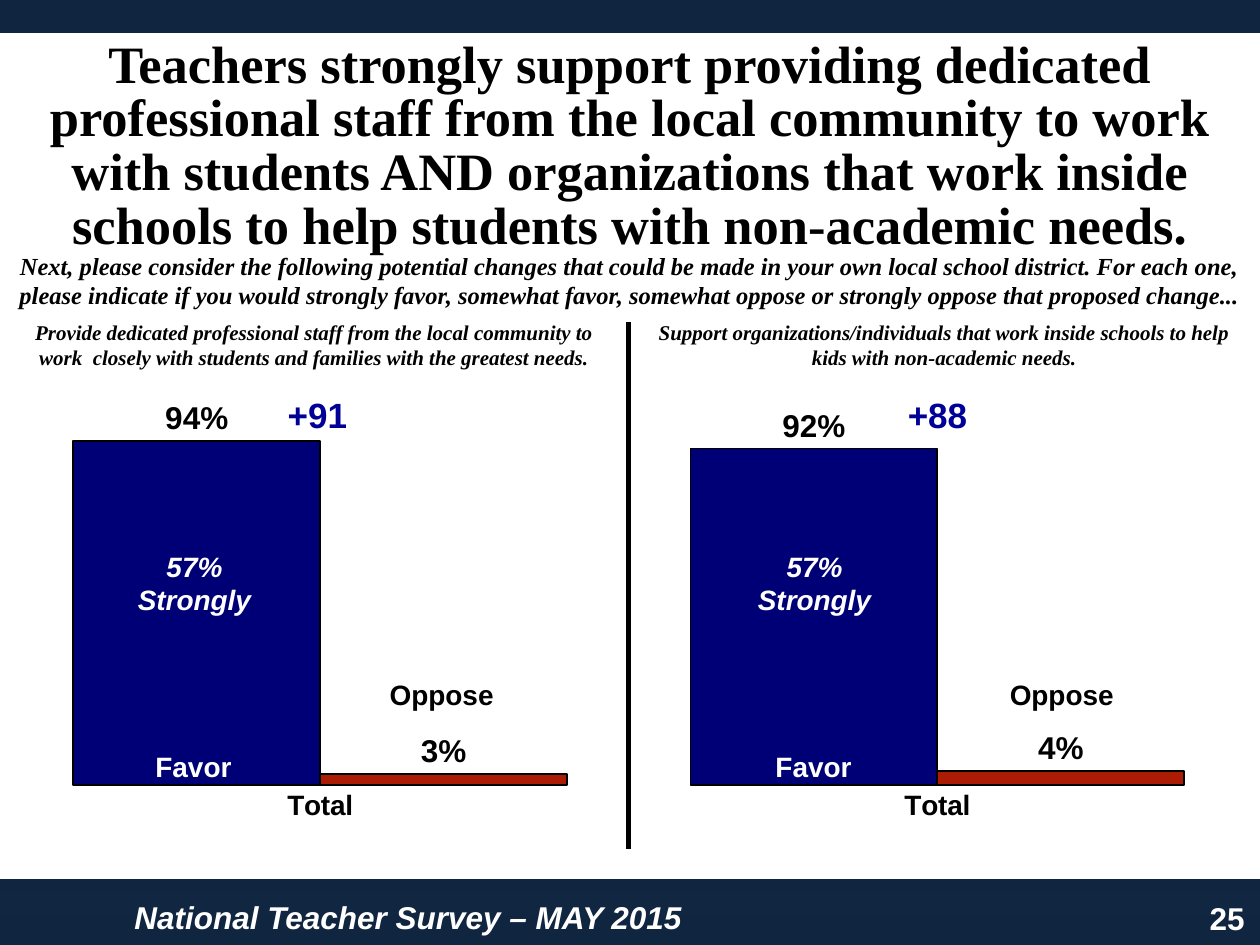
from copy import deepcopy

from lxml import etree
from pptx import Presentation
from pptx import util as u
from pptx.chart.data import CategoryChartData
from pptx.dml.color import RGBColor
from pptx.enum import chart as charts, shapes, text
from pptx.oxml import parse_xml
from pptx.oxml.ns import nsdecls, qn

COLORS = {
    "navy": "10253F", "slate": "17375E", "white": "FFFFFF", "black": "000000",
    "favor": "000076", "oppose": "AC1C04", "margin": "000099",
}
SERIF, SANS = "Times New Roman", "Arial"
COLUMN_PITCH = 12.5


def color(name):
    return RGBColor.from_string(COLORS[name])


class SurveySlide:
    def __init__(self, presentation, layout):
        self.slide = presentation.slides.add_slide(presentation.slide_layouts[layout])
        self.shapes = self.slide.shapes

    def style(self, font, name=SANS, size=16, ink="black", bold=True, italic=False):
        values = {"name": name, "size": u.Pt(size), "bold": bold, "italic": italic}
        for key, value in values.items():
            setattr(font, key, value)
        font.color.rgb = color(ink)

    def background(self):
        fill = self.slide.background.fill
        fill.gradient()
        fill.gradient_angle = 90
        stop_list = self.slide.element.find(".//" + qn("a:gsLst"))
        stop_list.insert(1, deepcopy(stop_list[0]))
        for stop, place, name in zip(fill.gradient_stops, (0, 0.5, 1), ("navy", "slate", "navy")):
            stop.position = place
            stop.color.rgb = color(name)

    def panel(self, box):
        shape = self.shapes.add_shape(shapes.MSO_SHAPE.RECTANGLE, *map(u.Cm, box))
        shape.shadow.inherit = False
        shape.fill.solid()
        shape.fill.fore_color.rgb = color("white")
        shape.line.color.rgb = color("navy")
        shape.line.width = u.Pt(6)

    def set_text(self, shape, lines, align="CENTER", spacing=1.0, **font):
        frame = shape.text_frame
        frame.text = "\n".join(lines)
        frame.word_wrap = True
        frame.auto_size = text.MSO_AUTO_SIZE.NONE
        frame.vertical_anchor = text.MSO_ANCHOR.TOP
        for paragraph in frame.paragraphs:
            if shape.is_placeholder:
                properties = paragraph._p.get_or_add_pPr()
                properties.set("marL", "0")
                properties.set("indent", "0")
                etree.SubElement(properties, qn("a:buNone"))
            paragraph.alignment = getattr(text.PP_ALIGN, align)
            paragraph.line_spacing = spacing
            paragraph.space_before = u.Pt(0)
            for run in paragraph.runs:
                self.style(run.font, **font)

    def label(self, box, *lines, **options):
        self.set_text(self.shapes.add_textbox(*map(u.Cm, box)), lines, **options)

    def placeholder(self, index, box, line, **options):
        shape = self.slide.placeholders[index]
        for key, value in zip(("left", "top", "width", "height"), box):
            setattr(shape, key, u.Cm(value))
        self.shapes._spTree.append(shape._element)
        self.set_text(shape, [line], name=SERIF, **options)

    def divider(self, x, top, bottom):
        line = self.shapes.add_connector(
            shapes.MSO_CONNECTOR.STRAIGHT, *map(u.Cm, (x, top, x, bottom)))
        line.line.color.rgb = color("black")
        line.line.width = u.Pt(3)
        etree.SubElement(line._element.spPr, qn("a:effectLst"))

    def chart(self, box, categories, series, plot_box):
        data = CategoryChartData(number_format="0%")
        data.categories = categories
        for name, values, _ in series:
            data.add_series(name, values)
        chart = self.shapes.add_chart(
            charts.XL_CHART_TYPE.COLUMN_CLUSTERED, *map(u.Cm, box), data).chart
        chart.has_legend = chart.has_title = False
        self.style(chart.font, size=18)
        for axis in (chart.category_axis, chart.value_axis):
            axis.major_tick_mark = axis.minor_tick_mark = charts.XL_TICK_MARK.NONE
            axis.has_major_gridlines = False
            axis.format.line.fill.background()
        self.style(chart.category_axis.tick_labels.font)
        scale = {"minimum_scale": 0, "maximum_scale": 1.05, "major_unit": 0.1,
                 "tick_label_position": charts.XL_TICK_LABEL_POSITION.NONE}
        for key, value in scale.items():
            setattr(chart.value_axis, key, value)
        plot = chart.plots[0]
        plot.gap_width, plot.overlap, plot.vary_by_categories = 50, 0, False
        for bars, (_, _, name) in zip(plot.series, series):
            bars.format.fill.solid()
            bars.format.fill.fore_color.rgb = color(name)
            bars.format.line.color.rgb = color("black")
            bars.format.line.width = u.Pt(1)
            labels = bars.data_labels
            labels.show_value = True
            labels.number_format, labels.number_format_is_linked = "0%", False
            labels.position = charts.XL_LABEL_POSITION.OUTSIDE_END
            self.style(labels.font, size=18)
        area = chart._chartSpace.find(".//" + qn("c:plotArea"))
        for old in area.findall(qn("c:layout")):
            area.remove(old)
        sides = "".join(f'<c:{key} val="{value}"/>' for key, value in zip("xywh", plot_box))
        area.insert(0, parse_xml(
            f'<c:layout {nsdecls("c")}><c:manualLayout><c:layoutTarget val="inner"/>'
            f'<c:xMode val="edge"/><c:yMode val="edge"/>{sides}</c:manualLayout></c:layout>'))

    def remove_empty(self):
        for shape in list(self.slide.placeholders):
            if not shape.has_text_frame or not shape.text_frame.text:
                shape._element.getparent().remove(shape._element)


def main():
    presentation = Presentation()
    presentation.slide_width, presentation.slide_height = u.Cm(25.4), u.Cm(19.05)
    page = SurveySlide(presentation, 4)
    page.background()
    page.panel((-0.25, 0.56, 25.88, 17.27))
    page.label((22.8, 18, 2.54, 1.02), "25", align="RIGHT", size=18, ink="white")
    page.label((2.46, 17.98, 19.84, 1.02), "National Teacher Survey – MAY 2015",
               align="LEFT", size=18, ink="white", italic=True)
    page.chart((-0.15, -0.5, 25.68, 18.54), ["Total", "Total"],
               [("Series 1", (0.94, 0.92), "favor"), ("Series 2", (0.03, 0.04), "oppose")],
               (0.015, 0.463, 0.969, 0.418))
    page.placeholder(
        0, (0, 0.69, 25.4, 4.62),
        "Teachers strongly support providing dedicated professional staff from the local "
        "community to work with students AND organizations that work inside schools to help "
        "students with non-academic needs.", size=30, spacing=0.85)
    page.placeholder(
        2, (0, 4.93, 25.4, 1.45),
        "Next, please consider the following potential changes that could be made in your own "
        "local school district. For each one, please indicate if you would strongly favor, "
        "somewhat favor, somewhat oppose or strongly oppose that proposed change...",
        size=14, italic=True)
    proposals = [
        (1, "Provide dedicated professional staff from the local community to work  closely "
            "with students and families with the greatest needs.", "+91"),
        (3, "Support organizations/individuals that work inside schools to help kids with "
            "non-academic needs.", "+88"),
    ]
    for column, (index, proposal, margin) in enumerate(proposals):
        left = column * COLUMN_PITCH
        page.placeholder(index, (column * 12.7, 6.32, 12.67, 1.27), proposal,
                         size=12, italic=True)
        page.label((left + 1.4, 14.99, 5, 0.94), "Favor", ink="white")
        page.label((left + 1.42, 10.95, 5, 1.63), "57%", "Strongly", ink="white", italic=True)
        page.label((left + 6.38, 13.54, 5.05, 0.94), "Oppose")
        page.label((left + 4.7, 7.8, 3.4, 1.12), margin, size=20, ink="margin")
    page.divider(12.67, 6.5, 17.12)
    page.remove_empty()
    presentation.save("out.pptx")


if __name__ == "__main__":
    main()
